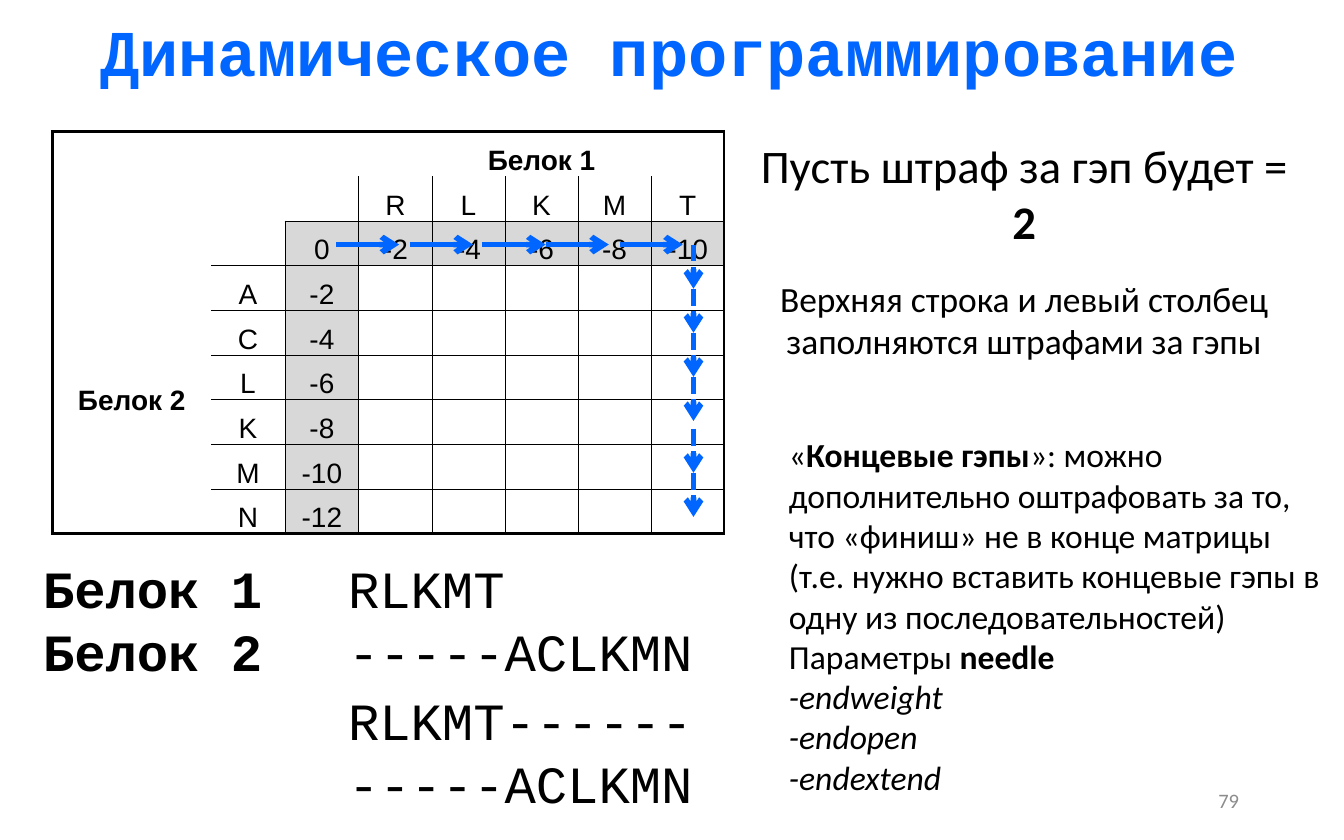
import dataclasses
import itertools

import pptx
import pptx.dml.color
import pptx.enum.dml
import pptx.enum.shapes
import pptx.enum.text
import pptx.oxml.ns
import pptx.util
from lxml import etree

ALIGN = pptx.enum.text.PP_ALIGN
ANCHOR = pptx.enum.text.MSO_ANCHOR
DASH = pptx.enum.dml.MSO_LINE
WIDTH, HEIGHT = pptx.util.Inches(10), pptx.util.Inches(6.25)


@dataclasses.dataclass(frozen=True)
class Theme:
    accent: str = "0066FF"
    ink: str = "000000"
    muted: str = "8C8C8C"
    penalty: str = "D8D8D8"
    code: str = "Courier New"
    body: str = "Calibri"
    grid: str = "Arial"
    title_size: int = 35
    code_size: int = 28
    lead_size: int = 25
    note_size: int = 19
    detail_size: int = 18
    grid_size: int = 15
    number_size: int = 11
    thin: float = 0.5
    thick: float = 1.5
    arrow: float = 3


THEME = Theme()

# Percentages of the slide's width (across) and height (down)
TABLE_LEFT, TABLE_TOP = 3.9, 15.68
COLUMNS = [11.8, 5.5, 5.5] + [5.44] * 5
ROW = 5.32
PROTEIN_1, PROTEIN_2 = "RLKMT", "ACLKMN"
GAP_PENALTY = 2
FIRST_ROW, FIRST_COLUMN = 2, 2  # where the score matrix starts
LAST_ROW = FIRST_ROW + len(PROTEIN_2)
LAST_COLUMN = FIRST_COLUMN + len(PROTEIN_1)


def across(percent):
    return round(WIDTH * percent / 100)


def down(percent):
    return round(HEIGHT * percent / 100)


def color(value):
    return pptx.dml.color.RGBColor.from_string(value)


def apply(target, values):
    for name, value in values.items():
        setattr(target, name, value)


def add_span(para, words, font, size, ink=THEME.ink, **style):
    span = para.add_run()
    span.text = words
    apply(span.font, {"name": font, "size": pptx.util.Pt(size), **style})
    span.font.color.rgb = color(ink)


def add_text(page, place, paragraphs, font, size, ink=THEME.ink,
             align=ALIGN.LEFT, anchor=ANCHOR.TOP):
    """Each paragraph is a list of (words, style) pairs."""
    left, top, width, height = place
    box = page.shapes.add_textbox(across(left), down(top),
                                  across(width), down(height))
    frame = box.text_frame
    apply(frame, {"word_wrap": True, "vertical_anchor": anchor,
                  "margin_left": across(0.9), "margin_right": across(0.9),
                  "margin_top": down(0.64), "margin_bottom": down(0.64)})
    for index, spans in enumerate(paragraphs):
        para = frame.add_paragraph() if index else frame.paragraphs[0]
        para.alignment = align
        for words, style in spans:
            add_span(para, words, font, size, ink, **style)


def add_code(page, place, lines, **style):
    add_text(page, place, [[(line, style)] for line in lines],
             THEME.code, THEME.code_size)


def add_arrow(page, start, end, dash=DASH.SOLID):
    arrow = page.shapes.add_connector(
        pptx.enum.shapes.MSO_CONNECTOR.STRAIGHT,
        across(start[0]), down(start[1]), across(end[0]), down(end[1]))
    apply(arrow.line, {"width": pptx.util.Pt(THEME.arrow), "dash_style": dash})
    arrow.line.color.rgb = color(THEME.accent)
    outline = arrow.line._get_or_add_ln()
    etree.SubElement(outline, pptx.oxml.ns.qn("a:tailEnd"), type="arrow")
    etree.SubElement(arrow._element.spPr, pptx.oxml.ns.qn("a:effectLst"))


def border_widths(row, column):
    """Thin rules around the matrix and its letters, a thick outer frame."""
    in_rows, in_columns = row >= FIRST_ROW, column >= FIRST_COLUMN
    if in_rows and in_columns:
        sides = "LRTB"
    elif row == 1 and column > FIRST_COLUMN:
        sides = "LRB"
    elif column == 1 and row > FIRST_ROW:
        sides = "RTB"
    elif (row, column) in ((1, FIRST_COLUMN), (FIRST_ROW, 1)):
        sides = "RB"
    else:
        sides = ""
    widths = dict.fromkeys(sides, THEME.thin)
    frame = {"L": column == 0, "T": row == 0,
             "R": column == LAST_COLUMN or (row == 0 and column > FIRST_COLUMN),
             "B": row == LAST_ROW or (column == 0 and row > FIRST_ROW)}
    widths.update({side: THEME.thick for side, outer in frame.items() if outer})
    return widths


def set_borders(cell, widths):
    qn = pptx.oxml.ns.qn
    properties = cell._tc.get_or_add_tcPr()
    for side in "LRTB":
        width = pptx.util.Pt(widths.get(side, 0))
        line = etree.SubElement(properties, qn(f"a:ln{side}"), w=str(width))
        if width:
            paint = etree.SubElement(line, qn("a:solidFill"))
            etree.SubElement(paint, qn("a:srgbClr"), val=THEME.ink)
        else:
            etree.SubElement(line, qn("a:noFill"))


def matrix_words():
    words = {(0, FIRST_COLUMN + 1): "Белок 1", (FIRST_ROW + 1, 0): "Белок 2",
             (FIRST_ROW, FIRST_COLUMN): "0"}
    for step, letter in enumerate(PROTEIN_1, 1):
        words[1, FIRST_COLUMN + step] = letter
        words[FIRST_ROW, FIRST_COLUMN + step] = str(-GAP_PENALTY * step)
    for step, letter in enumerate(PROTEIN_2, 1):
        words[FIRST_ROW + step, 1] = letter
        words[FIRST_ROW + step, FIRST_COLUMN] = str(-GAP_PENALTY * step)
    return words


def add_matrix(page):
    rows, columns = LAST_ROW + 1, LAST_COLUMN + 1
    table = page.shapes.add_table(
        rows, columns, across(TABLE_LEFT), down(TABLE_TOP),
        across(sum(COLUMNS)), down(ROW * rows)).table
    apply(table, {"first_row": False, "horz_banding": False})
    for column, width in zip(table.columns, COLUMNS):
        column.width = across(width)
    for row in table.rows:
        row.height = down(ROW)
    table.cell(0, FIRST_COLUMN + 1).merge(table.cell(0, LAST_COLUMN))
    table.cell(FIRST_ROW + 1, 0).merge(table.cell(LAST_ROW, 0))

    words = matrix_words()
    margin = across(0.1)
    for row, column in itertools.product(range(rows), range(columns)):
        cell = table.cell(row, column)
        set_borders(cell, border_widths(row, column))
        apply(cell, {"margin_left": margin, "margin_right": margin,
                     "margin_top": margin, "margin_bottom": 0,
                     "vertical_anchor": ANCHOR.BOTTOM if column else ANCHOR.MIDDLE})
        if (row >= FIRST_ROW and column >= FIRST_COLUMN
                and (row == FIRST_ROW or column == FIRST_COLUMN)):
            cell.fill.solid()
            cell.fill.fore_color.rgb = color(THEME.penalty)
        else:
            cell.fill.background()
        if (row, column) in words:
            para = cell.text_frame.paragraphs[0]
            para.alignment = ALIGN.CENTER
            add_span(para, words[row, column], THEME.grid, THEME.grid_size,
                     bold=row == 0 or column == 0)


def add_path(page):
    """Along the top row of the matrix, then down its last column."""
    top, turn, length, step = 29.12, 51.6, 4.7, 5.25
    for left in (25, 30.5, 35.9, 40.6, 46.1):
        add_arrow(page, (left, top), (left + length, top))
    for first, count in ((top, 4), (51.04, 2)):
        for index in range(count):
            start = first + step * index
            add_arrow(page, (turn, start), (turn, start + step), DASH.SQUARE_DOT)


def main():
    deck = pptx.Presentation()
    apply(deck, {"slide_width": WIDTH, "slide_height": HEIGHT})
    page = deck.slides.add_slide(deck.slide_layouts[6])
    bold, italic, plain = {"bold": True}, {"italic": True}, {}

    add_text(page, (0.4, 0.64, 98.8, 10.88),
             [[("Динамическое программирование", bold)]],
             THEME.code, THEME.title_size, THEME.accent, ALIGN.CENTER)
    add_matrix(page)
    add_code(page, (25, 65.6, 38.3, 16.48), ["RLKMT", "-----ACLKMN"])
    add_code(page, (2.3, 65.6, 21.9, 16.48), ["Белок 1", "Белок 2"], **bold)
    add_code(page, (25, 81.28, 38.3, 16.48), ["RLKMT------", "-----ACLKMN"])
    add_path(page)
    add_text(page, (55.5, 15.68, 41.4, 14.88),
             [[("Пусть штраф за гэп будет = ", plain), ("2", bold)]],
             THEME.body, THEME.lead_size, align=ALIGN.CENTER)
    add_text(page, (55.5, 32.32, 41.4, 11.68),
             [[("Верхняя строка и левый столбец заполняются штрафами за гэпы", plain)]],
             THEME.body, THEME.note_size, align=ALIGN.CENTER)
    add_text(page, (57.8, 51.04, 42.2, 45.12), [
        [("«", plain), ("Концевые гэпы", bold),
         ("»: можно дополнительно оштрафовать за то, что «финиш» не в конце "
          "матрицы (т.е. нужно вставить концевые гэпы в одну из "
          "последовательностей)", plain)],
        [("Параметры ", plain), ("needle", bold)],
        *([(option, italic)] for option in ("-endweight", "-endopen", "-endextend")),
    ], THEME.body, THEME.detail_size)
    add_text(page, (70.6, 92.64, 22.5, 5.28), [[("79", plain)]], THEME.body,
             THEME.number_size, THEME.muted, ALIGN.RIGHT, ANCHOR.MIDDLE)
    deck.save("out.pptx")


if __name__ == "__main__":
    main()
